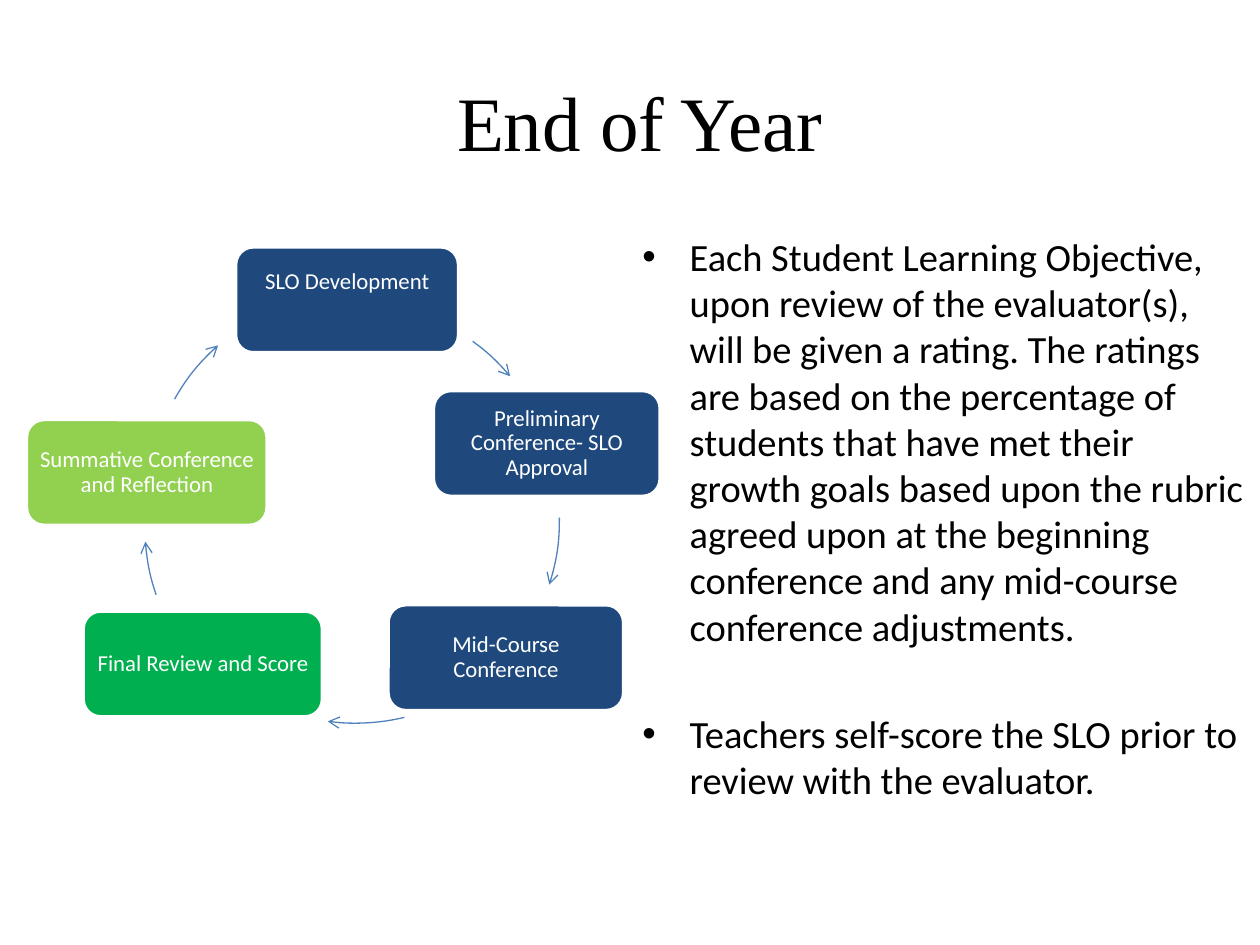
from dataclasses import dataclass
from math import cos, radians, sin

from lxml.etree import SubElement
from pptx import Presentation
from pptx.dml.color import RGBColor
from pptx.enum.shapes import MSO_SHAPE
from pptx.enum.text import MSO_ANCHOR, PP_ALIGN
from pptx.oxml.ns import qn
from pptx.util import Inches, Pt


@dataclass(frozen=True)
class Theme:
    """Colours, fonts and type sizes of the slide."""
    ink: str = "000000"
    paper: str = "FFFFFF"
    navy: str = "1F497D"
    green: str = "00B050"
    lime: str = "92D050"
    arrow: str = "4F81BD"
    head_font: str = "Times New Roman"
    body_font: str = "Calibri"
    title: int = 44
    body: int = 22
    node: int = 13


@dataclass(frozen=True)
class Box:
    """A region in grid cells; the slide is 100 columns by 75 rows."""
    col: float
    row: float
    cols: float
    rows: float

    def sub(self, col, row, cols, rows):
        """Return a box placed relative to this one."""
        return Box(self.col + col, self.row + row, cols, rows)

    def emu(self):
        """Return left, top, width and height as lengths."""
        return [cell(v) for v in (self.col, self.row, self.cols, self.rows)]


T = Theme()
NODE_ROWS = 8.4
CIRCLE = 33.4
HANG = Pt(27)
NODES = [
    ("SLO Development", 16.7, 0, 17.7, T.navy, 0.33),
    ("Preliminary Conference- SLO Approval", 32.4, 11.4, 18, T.navy, 0.05),
    ("Mid-Course Conference", 28.8, 28.4, 18.7, T.navy, 0.05),
    ("Final Review and Score", 4.6, 28.9, 19, T.green, 0.05),
    ("Summative Conference and Reflection", 0.1, 13.7, 19.1, T.lime, 0.05),
]
ARCS = [
    (9, 4.3, -54, -40),
    (9, 5, -0.7, 17.8),
    (9.5, 4.4, 76.5, 97.5),
    (9.5, 5.5, 161.1, 175.9),
    (9.7, 3.6, 209.5, 228.4),
]
POINTS = [
    ("Each Student Learning Objective, upon review of the evaluator(s), will be "
     "given a rating. The ratings are based on the percentage of students that "
     "have met their growth goals based upon the rubric agreed upon at the "
     "beginning conference and any mid-course conference adjustments."),
    "Teachers self-score the SLO prior to review with the evaluator.",
]


def cell(n):
    """Convert grid cells to a length."""
    return Inches(n / 10)


def rgb(value):
    """Return a colour from its hex value."""
    return RGBColor.from_string(value)


def add_text(p, text, size, color=T.ink, font=T.body_font, align=PP_ALIGN.LEFT,
             before=0, spacing=1.0):
    """Write one formatted run into a paragraph."""
    p.alignment, p.space_before, p.line_spacing = align, Pt(before), spacing
    r = p.add_run()
    r.text = text
    r.font.size, r.font.name = Pt(size), font
    r.font.color.rgb = rgb(color)


def set_frame(tf, anchor, side, top, bottom):
    """Set wrapping, anchor and insets of a text frame."""
    tf.word_wrap, tf.vertical_anchor = True, anchor
    tf.margin_left = tf.margin_right = Inches(side)
    tf.margin_top, tf.margin_bottom = Inches(top), Inches(bottom)


def add_bullet(p):
    """Give a paragraph a hanging round bullet."""
    pPr = p._p.get_or_add_pPr()
    pPr.set("marL", str(HANG))
    pPr.set("indent", str(-HANG))
    SubElement(pPr, qn("a:buFont")).set("typeface", "Arial")
    SubElement(pPr, qn("a:buChar")).set("char", "•")


def add_title(s, box):
    """Place the slide title."""
    tf = s.shapes.add_textbox(*box.emu()).text_frame
    set_frame(tf, MSO_ANCHOR.MIDDLE, 0.1, 0.05, 0.05)
    add_text(tf.paragraphs[0], "End of Year", T.title, font=T.head_font,
             align=PP_ALIGN.CENTER)


def add_points(s, box):
    """Place the bulleted text."""
    tf = s.shapes.add_textbox(*box.emu()).text_frame
    set_frame(tf, MSO_ANCHOR.TOP, 0.1, 0.52, 0.05)
    for i, text in enumerate(POINTS):
        p = tf.add_paragraph() if i else tf.paragraphs[0]
        add_text(p, text, T.body, before=35 if i else 0)
        add_bullet(p)


def add_node(s, box, text, fill, bottom):
    """Place one step of the cycle."""
    sp = s.shapes.add_shape(MSO_SHAPE.ROUNDED_RECTANGLE, *box.emu())
    sp.shadow.inherit = False
    sp.fill.solid()
    sp.fill.fore_color.rgb = rgb(fill)
    sp.line.color.rgb, sp.line.width = rgb(T.paper), Pt(2)
    set_frame(sp.text_frame, MSO_ANCHOR.MIDDLE, 0.05, 0.05, bottom)
    add_text(sp.text_frame.paragraphs[0], text, T.node, color=T.paper,
             align=PP_ALIGN.CENTER, spacing=0.9)


def add_arc(s, box, start, end):
    """Draw an arrow along the circle that fills the box."""
    left, top, width, height = box.emu()
    fb = s.shapes.build_freeform(left, top)
    fb.add_line_segments([(left + width, top + height)], close=False)
    sp = fb.convert_to_shape()
    sp.shadow.inherit = False
    sp.fill.background()
    sp.line.color.rgb, sp.line.width = rgb(T.arrow), Pt(0.75)
    spPr = sp._element.spPr
    SubElement(spPr.find(qn("a:ln")), qn("a:tailEnd")).set("type", "arrow")
    outline = spPr.find(".//" + qn("a:path"))
    outline.remove(outline.find(qn("a:lnTo")))
    pt = outline.find(".//" + qn("a:pt"))
    pt.set("x", str(round(width / 2 * (1 + cos(radians(start))))))
    pt.set("y", str(round(height / 2 * (1 + sin(radians(start))))))
    arc = SubElement(outline, qn("a:arcTo"))
    for name, value in (("wR", width / 2), ("hR", height / 2),
                        ("stAng", start % 360 * 60000),
                        ("swAng", (end - start) * 60000)):
        arc.set(name, str(round(value)))


def add_cycle(s, box):
    """Place the steps and the arrows between them."""
    for (text, col, row, cols, fill, bottom), (x, y, start, end) in zip(NODES, ARCS):
        add_node(s, box.sub(col, row, cols, NODE_ROWS), text, fill, bottom)
        add_arc(s, box.sub(x, y, CIRCLE, CIRCLE), start, end)


def main():
    """Build and save the slide."""
    prs = Presentation()
    prs.slide_width, prs.slide_height = cell(100), cell(75)
    s = prs.slides.add_slide(prs.slide_layouts[6])
    add_title(s, Box(8.3, 3.3, 85, 12.5))
    add_points(s, Box(50, 13.3, 49.8, 59.2))
    add_cycle(s, Box(2, 19.6, 50.4, 38))
    prs.save("out.pptx")


if __name__ == "__main__":
    main()
